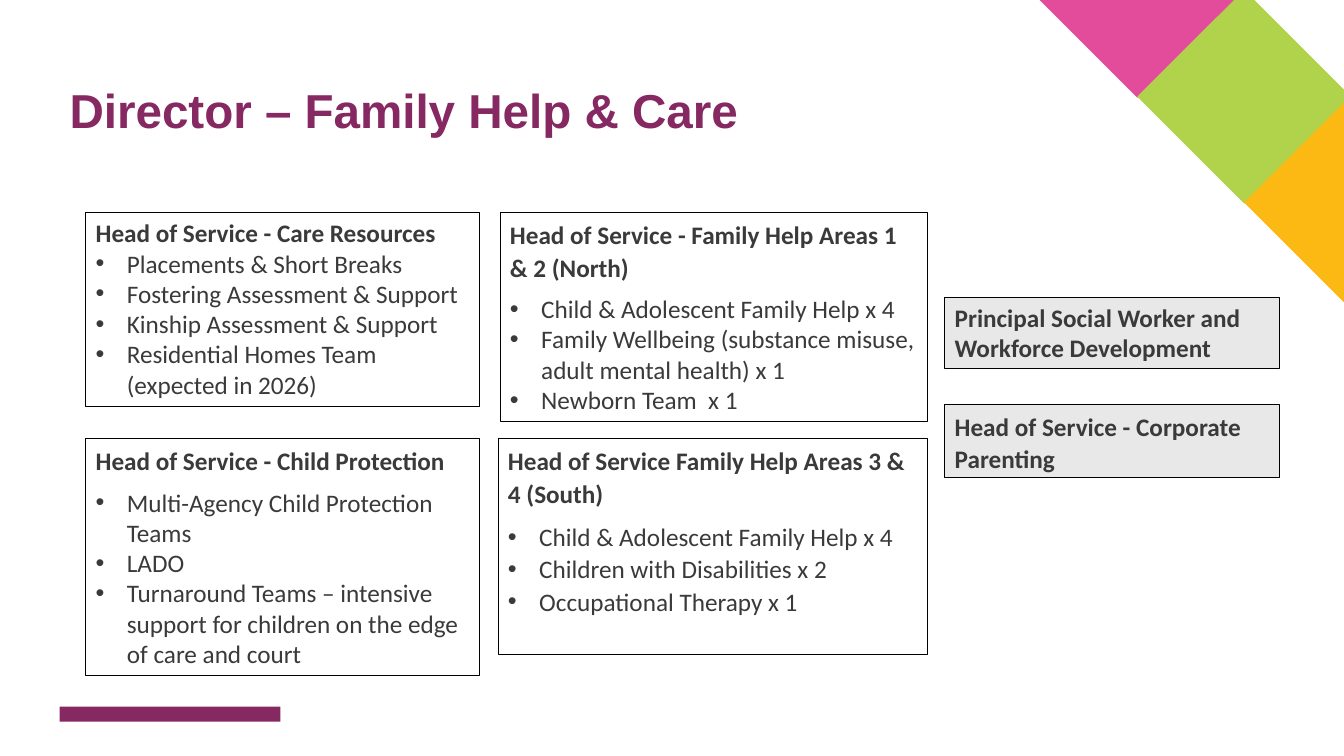
from lxml import etree
from pptx import Presentation
from pptx.dml.color import RGBColor
from pptx.enum.shapes import MSO_SHAPE as Shape
from pptx.enum.text import MSO_ANCHOR as Anchor, MSO_AUTO_SIZE as AutoSize, PP_ALIGN as Align
from pptx.oxml.ns import qn
from pptx.util import Inches, Pt

PLUM, PINK, GREEN, AMBER = "862861", "E34C9B", "B1D34C", "FDB913"
WHITE, GREY, BLACK, INK = "FFFFFF", "E8E8E8", "000000", "3A3A3A"


def colour(hex_text):
    return RGBColor.from_string(hex_text)


class TeamSlide:
    """Holds the style and the current slide."""

    body_font, body_size = "Calibri", 18
    title_font, title_size = "Arial", 34
    indent = 0.31
    loose = 1.07

    def __init__(self, slide):
        self.slide = slide

    def run(self, paragraph, words, font, size, ink, bold):
        run = paragraph.add_run()
        run.text = words
        run.font.name, run.font.size, run.font.bold = font, Pt(size), bold
        run.font.color.rgb = colour(ink)

    def title(self, words, left, top, width, height):
        title = self.slide.shapes.title
        title.left, title.top = Inches(left), Inches(top)
        title.width, title.height = Inches(width), Inches(height)
        frame = title.text_frame
        frame.word_wrap, frame.auto_size = True, AutoSize.NONE
        frame.vertical_anchor = Anchor.BOTTOM
        heading = frame.paragraphs[0]
        heading.alignment, heading.line_spacing = Align.LEFT, 0.9
        self.run(heading, words, self.title_font, self.title_size, PLUM, True)

    def block(self, left, top, width, height, fill, line=None, rotation=0):
        block = self.slide.shapes.add_shape(
            Shape.RECTANGLE, Inches(left), Inches(top), Inches(width), Inches(height))
        block.shadow.inherit = False
        block.rotation = rotation
        block.fill.solid()
        block.fill.fore_color.rgb = colour(fill)
        if line:
            block.line.color.rgb = colour(line)
            block.line.width = Pt(0.75)
        else:
            block.line.fill.background()
        return block

    def bullet(self, paragraph):
        properties = paragraph._p.get_or_add_pPr()
        properties.set("marL", str(Inches(self.indent)))
        properties.set("indent", str(-Inches(self.indent)))
        etree.SubElement(properties, qn("a:buFont")).set("typeface", "Arial")
        etree.SubElement(properties, qn("a:buChar")).set("char", "•")

    def service(self, place, head, teams=(), fill=WHITE, loose_head=True, loose_teams=False):
        frame = self.block(*place, fill, BLACK).text_frame
        frame.word_wrap, frame.auto_size = True, AutoSize.SHAPE_TO_FIT_TEXT
        frame.vertical_anchor = Anchor.TOP
        heading = frame.paragraphs[0]
        heading.alignment = Align.LEFT
        if loose_head:
            heading.line_spacing, heading.space_after = self.loose, Pt(8)
        self.run(heading, head, self.body_font, self.body_size, INK, True)
        for team in teams:
            item = frame.add_paragraph()
            self.bullet(item)
            item.alignment = Align.LEFT
            if loose_teams:
                item.line_spacing = self.loose
            self.run(item, team, self.body_font, self.body_size, INK, False)


def main():
    deck = Presentation()
    deck.slide_width, deck.slide_height = Inches(13.33), Inches(7.5)
    page = TeamSlide(deck.slides.add_slide(deck.slide_layouts[5]))

    # Corner diamonds and footer bar
    for step, fill in enumerate((PINK, GREEN, AMBER)):
        page.block(10.53 + 1.06 * step, -0.84 + 1.05 * step, 1.5, 1.5, fill, rotation=45)
    page.block(0.59, 7.01, 2.19, 0.15, PLUM)

    page.title("Director – Family Help & Care", 0.59, 0.4, 10.04, 1.03)

    # Services with their teams
    upper, lower = 2.11, 4.35
    page.service((0.85, upper, 3.91, 1.92), "Head of Service - Care Resources", (
        "Placements & Short Breaks",
        "Fostering Assessment & Support",
        "Kinship Assessment & Support",
        "Residential Homes Team (expected in 2026)"), loose_head=False)
    page.service((4.96, upper, 4.24, 2.07), "Head of Service - Family Help Areas 1 & 2 (North)", (
        "Child & Adolescent Family Help x 4",
        "Family Wellbeing (substance misuse, adult mental health) x 1",
        "Newborn Team  x 1"))
    page.service((0.85, lower, 3.91, 2.35), "Head of Service - Child Protection", (
        "Multi-Agency Child Protection Teams",
        "LADO",
        "Turnaround Teams – intensive support for children on the edge of care and court"))
    page.service((4.94, lower, 4.26, 2.14), "Head of Service Family Help Areas 3 & 4 (South)", (
        "Child & Adolescent Family Help x 4",
        "Children with Disabilities x 2",
        "Occupational Therapy x 1"), loose_teams=True)

    # Posts without teams
    page.service((9.37, 2.95, 3.32, 0.71), "Principal Social Worker and Workforce Development",
                 fill=GREY, loose_head=False)
    page.service((9.37, 4.01, 3.32, 0.73), "Head of Service - Corporate Parenting", fill=GREY)

    deck.save("out.pptx")


if __name__ == "__main__":
    main()
